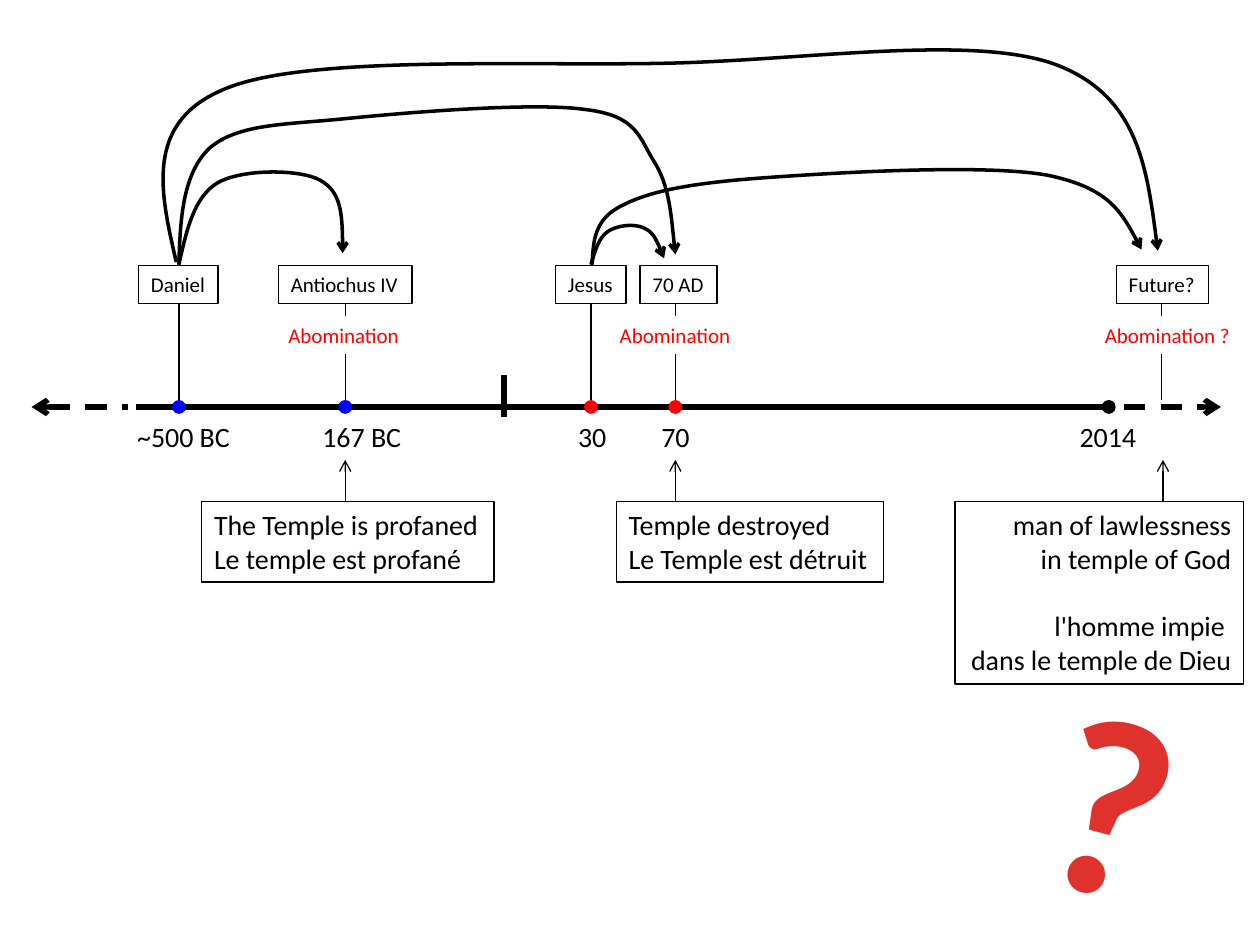
import pptx
import pptx.dml.color
import pptx.enum.dml
import pptx.enum.shapes
import pptx.enum.text
import pptx.oxml
import pptx.oxml.ns
import pptx.util
from dataclasses import dataclass
from lxml import etree


@dataclass(frozen=True)
class Theme:
    font: str = "Calibri"
    black: str = "000000"
    white: str = "FFFFFF"
    red: str = "FF0000"
    blue: str = "0000FF"
    mark_top: str = "E0322D"
    mark_bottom: str = "A2201C"
    small: int = 12
    body: int = 16
    mark: int = 144
    thin: float = 0.75
    curve: float = 2
    axis: float = 3


T = Theme()
ALIGN = pptx.enum.text.PP_ALIGN

# Rows of the timeline, on an inch grid
NAME_Y, NAME_H, ABOM_Y = 2.11, 0.3, 2.51
AXIS_Y, DOT = 3.23, 0.11
DATE_Y, DATE_H, NOTE_Y = 3.28, 0.37, 3.98

# Stem x, (name, left, width), (abomination, left, width)
EVENTS = [
    (1.42, ("Daniel", 1.1, 0.63), None),
    (2.74, ("Antiochus IV", 2.21, 1.06), ("Abomination", 2.19, 1.09)),
    (4.69, ("Jesus", 4.41, 0.56), None),
    (5.36, ("70 AD", 5.08, 0.61), ("Abomination", 4.82, 1.09)),
    (9.22, ("Future?", 8.86, 0.73), ("Abomination ?", 8.67, 1.2)),
]
# Dot x, dot colour, date, left, width
DATES = [
    (1.42, T.blue, "~500 BC", 0.99, 0.95),
    (2.74, T.blue, "167 BC", 2.46, 0.84),
    (4.69, T.red, "30", 4.49, 0.43),
    (5.36, T.red, "70", 5.15, 0.43),
    (8.8, T.black, "2014", 8.47, 0.66),
]
# Start point, then three points for each Bézier segment
PROPHECIES = [
    [(4.69, 2.1), (4.72, 2), (4.75, 1.89), (4.82, 1.84), (4.89, 1.79),
     (5.03, 1.77), (5.11, 1.81), (5.18, 1.84), (5.23, 1.94), (5.27, 2.05)],
    [(1.42, 2.1), (1.43, 1.74), (1.45, 1.37), (1.67, 1.17), (1.9, 0.98),
     (2.27, 0.99), (2.76, 0.94), (3.26, 0.89), (4.25, 0.81), (4.65, 0.87),
     (5.06, 0.92), (5.07, 1.09), (5.19, 1.28), (5.31, 1.47), (5.33, 1.74),
     (5.36, 2.02)],
    [(1.42, 2.1), (1.48, 1.83), (1.54, 1.56), (1.73, 1.45), (1.92, 1.34),
     (2.38, 1.34), (2.54, 1.43), (2.71, 1.52), (2.72, 1.76), (2.72, 2.01)],
    [(4.7, 2.1), (4.71, 1.92), (4.71, 1.74), (4.94, 1.63), (5.17, 1.51),
     (5.52, 1.45), (6.08, 1.41), (6.64, 1.37), (7.81, 1.3), (8.31, 1.39),
     (8.8, 1.49), (8.93, 1.73), (9.06, 1.98)],
    [(1.4, 2.08), (1.27, 1.52), (1.14, 0.96), (1.8, 0.7), (2.46, 0.43),
     (4.26, 0.53), (5.36, 0.5), (6.46, 0.47), (7.76, 0.27), (8.4, 0.52),
     (9.03, 0.77), (9.11, 1.38), (9.19, 1.99)],
]


def grid(*values):
    return [pptx.util.Cm(v * 2.54) for v in values]


def rgb(color):
    return pptx.dml.color.RGBColor.from_string(color)


def sub(parent, tag, **attrs):
    return etree.SubElement(parent, pptx.oxml.ns.qn(tag), **attrs)


def style_line(sp, width, dash=False, arrow=None):
    """arrow is "a:headEnd" or "a:tailEnd"."""
    sp.line.color.rgb = rgb(T.black)
    sp.line.width = pptx.util.Pt(width)
    if dash:
        sp.line.dash_style = pptx.enum.dml.MSO_LINE.DASH
    if arrow:
        sub(sp._element.spPr.find(pptx.oxml.ns.qn("a:ln")), arrow, type="arrow")


def add_line(s, x1, y1, x2, y2, width=T.thin, **line):
    sp = s.shapes.add_connector(pptx.enum.shapes.MSO_CONNECTOR.STRAIGHT,
                                *grid(x1, y1, x2, y2))
    style_line(sp, width, **line)
    sub(sp._element.spPr, "a:effectLst")


def add_dot(s, x, color):
    sp = s.shapes.add_shape(pptx.enum.shapes.MSO_SHAPE.OVAL,
                            *grid(x - DOT / 2, AXIS_Y - DOT / 2, DOT, DOT))
    sp.shadow.inherit = False
    sp.fill.solid()
    sp.fill.fore_color.rgb = rgb(color)
    sp.line.fill.background()


def add_text(s, text, x, y, w, h, size=T.body, color=T.black, fill=None,
             border=False, wrap=False, align=ALIGN.LEFT, bold=None, gap_before=None):
    """One paragraph per line; gap_before is the index of a spaced paragraph."""
    sp = s.shapes.add_textbox(*grid(x, y, w, h))
    if fill:
        sp.fill.solid()
        sp.fill.fore_color.rgb = rgb(fill)
    if border:
        style_line(sp, T.thin)
    tf = sp.text_frame
    tf.word_wrap = wrap
    tf.auto_size = pptx.enum.text.MSO_AUTO_SIZE.SHAPE_TO_FIT_TEXT
    for i, line in enumerate(text.split("\n")):
        p = tf.paragraphs[0] if i == 0 else tf.add_paragraph()
        p.alignment = align
        if i == gap_before:
            p.space_before = pptx.util.Pt(size * 1.22)
        r = p.add_run()
        r.text = line
        r.font.name, r.font.size, r.font.bold = T.font, pptx.util.Pt(size), bold
        r.font.color.rgb = rgb(color)
    return sp


def bezier(a, b, c, d, t):
    u = 1 - t
    return [u**3 * i + 3 * u * u * t * j + 3 * u * t * t * k + t**3 * m
            for i, j, k, m in zip(a, b, c, d)]


def add_curve(s, points):
    """Arrow along a Bézier curve, its frame fitted to the drawn curve."""
    points = [grid(*pt) for pt in points]
    starts = range(0, len(points) - 1, 3)
    outline = [bezier(*points[i:i + 4], n / 20) for i in starts for n in range(1, 21)]
    fb = s.shapes.build_freeform(*points[0])
    fb.add_line_segments(outline, close=False)
    sp = fb.convert_to_shape()
    sp.shadow.inherit = False
    sp.fill.background()
    style_line(sp, T.curve, arrow="a:tailEnd")

    # Swap the fitted outline for true curve segments
    route = sp._element.spPr.find(".//" + pptx.oxml.ns.qn("a:path"))
    for child in list(route):
        route.remove(child)
    steps = [("a:moveTo", points[:1])]
    steps += [("a:cubicBezTo", points[i + 1:i + 4]) for i in starts]
    for tag, pts in steps:
        step = sub(route, tag)
        for x, y in pts:
            sub(step, "a:pt", x=str(x - sp.left), y=str(y - sp.top))


def add_question_mark(s):
    sp = add_text(s, "?", 8.16, 5.06, 1.35, 2.52, size=T.mark, color=T.mark_top,
                  wrap=True, align=ALIGN.CENTER, bold=True)
    sp.rotation = 15
    font = sp.text_frame.paragraphs[0].runs[0].font
    font.fill.gradient()
    font.fill.gradient_angle = 270
    stops = ((0.25, T.mark_top), (1, T.mark_bottom))
    for stop, (position, color) in zip(font.fill.gradient_stops, stops):
        stop.position = position
        stop.color.rgb = rgb(color)
    font._element.set("spc", "50")


def main():
    prs = pptx.Presentation()
    prs.slide_width, prs.slide_height = grid(10, 7.5)
    s = prs.slides.add_slide(prs.slide_layouts[6])

    # Time axis with the year-zero tick
    add_line(s, 1.08, AXIS_Y, 8.83, AXIS_Y, T.axis)
    add_line(s, 4, 3.31, 4, 2.98, T.axis)
    add_line(s, 8.92, AXIS_Y, 9.69, AXIS_Y, T.axis, dash=True, arrow="a:tailEnd")
    add_line(s, 0.25, AXIS_Y, 1.02, AXIS_Y, T.axis, dash=True, arrow="a:headEnd")

    # Names and abominations above the axis
    for x, (name, left, width), abomination in EVENTS:
        add_text(s, name, left, NAME_Y, width, NAME_H, size=T.small, border=True)
        add_line(s, x, NAME_Y + NAME_H, x, AXIS_Y - DOT / 2)
        if abomination:
            text, left, width = abomination
            add_text(s, text, left, ABOM_Y, width, NAME_H, size=T.small,
                     color=T.red, fill=T.white)

    # Dots and dates
    for x, color, date, left, width in DATES:
        add_dot(s, x, color)
        add_text(s, date, left, DATE_Y, width, DATE_H)

    # Prophecies
    for points in PROPHECIES:
        add_curve(s, points)

    # Notes below the axis
    for x in (2.74, 5.36, 9.23):
        add_line(s, x, DATE_Y + DATE_H, x, NOTE_Y, arrow="a:headEnd")
    add_text(s, "The Temple is profaned\nLe temple est profané",
             1.6, NOTE_Y, 2.32, 0.64, fill=T.white, border=True)
    add_text(s, "Temple destroyed\nLe Temple est détruit",
             4.89, NOTE_Y, 2.12, 0.64, border=True)
    add_text(s, "man of lawlessness\nin temple of God\nl'homme impie \ndans le temple de Dieu",
             7.58, NOTE_Y, 2.29, 1.45, border=True, wrap=True,
             align=ALIGN.RIGHT, gap_before=2)
    add_question_mark(s)

    prs.save("out.pptx")


if __name__ == "__main__":
    main()
